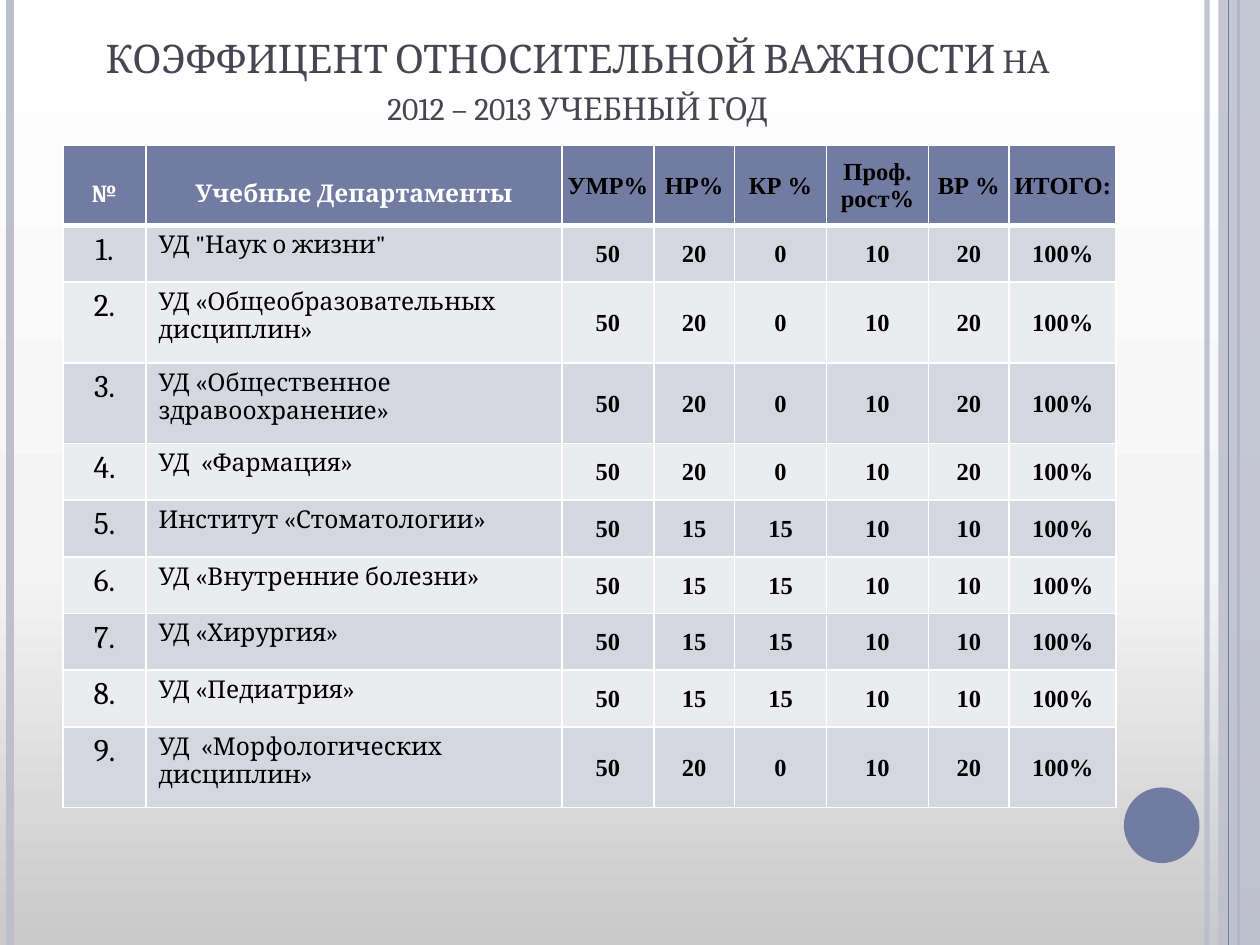
"""Build the slide with the table of relative importance by department."""
import copy

import lxml.etree
import pptx
import pptx.dml.color
import pptx.enum.shapes
import pptx.enum.text
import pptx.oxml
import pptx.oxml.ns
import pptx.util

Inches, Pt = pptx.util.Inches, pptx.util.Pt
ALIGN = pptx.enum.text.PP_ALIGN
ANCHOR = pptx.enum.text.MSO_ANCHOR
SHAPE = pptx.enum.shapes.MSO_SHAPE
qn = pptx.oxml.ns.qn

TITLE = "КОЭФФИЦЕНТ ОТНОСИТЕЛЬНОЙ ВАЖНОСТИ на 2012 – 2013 учебный год"
HEAD = ["№", "Учебные Департаменты", "УМР%", "НР%", "КР %",
        "Проф. рост%", "ВР %", "ИТОГО:"]
THEORY = [50, 20, 0, 10, 20]
CLINIC = [50, 15, 15, 10, 10]
UNITS = [
    ("УД \"Наук о жизни\"", THEORY),
    ("УД «Общеобразовательных дисциплин»", THEORY),
    ("УД «Общественное здравоохранение»", THEORY),
    ("УД  «Фармация»", THEORY),
    ("Институт «Стоматологии»", CLINIC),
    ("УД «Внутренние болезни»", CLINIC),
    ("УД «Хирургия»", CLINIC),
    ("УД «Педиатрия»", CLINIC),
    ("УД  «Морфологических дисциплин»", THEORY),
]
WIDTHS = [0.66, 3.3, 0.73, 0.64, 0.73, 0.81, 0.64, 0.85]
TALL, LOW, WRAP = 0.64, 0.45, 25
BLUE, PALE = "727CA3", "BCBFCE"
BANDS = ["EBECF0", "D5D7E0"]
SKY = [(0, "C9C9C9"), (0.4, "F4F4F4"), (1, "FFFFFF")]
RULES = [(9.58, PALE, 3, 93), (0.08, PALE, 4.5, 100), (9.83, BLUE, 1.5, 100)]
EDGE = (9.75, BLUE, 0.75, 100)


def tint(color, code):
    color.rgb = pptx.dml.color.RGBColor.from_string(code)


def fade(fill, share):
    node = fill._xPr.find(".//" + qn("a:srgbClr"))
    lxml.etree.SubElement(node, qn("a:alpha")).set("val", str(share * 1000))


def paint(slide):
    fill = slide.background.fill
    fill.gradient()
    fill.gradient_angle = 90
    first = fill.gradient_stops[0]._gs
    first.addnext(copy.deepcopy(first))
    for stop, (place, code) in zip(fill.gradient_stops, SKY):
        stop.position = place
        tint(stop.color, code)


def rule(slide, left, code, width, share):
    line = slide.shapes.add_connector(
        pptx.enum.shapes.MSO_CONNECTOR.STRAIGHT,
        Inches(left), 0, Inches(left), Inches(7.5))
    line.line.width = Pt(width)
    tint(line.line.color, code)
    if share < 100:
        fade(line.line.fill, share)
    lxml.etree.SubElement(line._element.spPr, qn("a:effectLst"))


def block(slide, kind, box, code, share=100):
    shape = slide.shapes.add_shape(kind, *map(Inches, box))
    shape.shadow.inherit = False
    shape.line.fill.background()
    shape.fill.solid()
    tint(shape.fill.fore_color, code)
    if share < 100:
        fade(shape.fill, share)


def style(para, size, face, code, bold=False, align=ALIGN.CENTER):
    para.alignment = align
    for run in para.runs:
        run.font.size, run.font.name, run.font.bold = Pt(size), face, bold
        tint(run.font.color, code)


def title(slide):
    box = slide.shapes.add_textbox(*map(Inches, (0.5, 0.3, 8.17, 0.77)))
    frame = box.text_frame
    frame.word_wrap = True
    frame.vertical_anchor = ANCHOR.BOTTOM
    frame.text = TITLE
    style(frame.paragraphs[0], 22.5, "Cambria", "464653")
    frame.paragraphs[0].runs[0].font._element.set("cap", "small")


def border(cell, row):
    widths = {"L": 1, "R": 1, "T": 3 if row == 1 else 1, "B": 1 if row else 3}
    for spot, (side, width) in enumerate(widths.items()):
        line = pptx.oxml.parse_xml(
            f'<a:ln{side} {pptx.oxml.ns.nsdecls("a")} w="{Pt(width)}">'
            f'<a:solidFill><a:srgbClr val="FFFFFF"/></a:solidFill></a:ln{side}>')
        cell._tc.get_or_add_tcPr().insert(spot, line)


def dress(cell, text, row, col):
    cell.text_frame.text = text
    para = cell.text_frame.paragraphs[0]
    if col > 1:
        cell.vertical_anchor = ANCHOR.MIDDLE
        cell.margin_left = cell.margin_right = cell.margin_top = Inches(0.01)
        cell.margin_bottom = 0
        style(para, 14, "Times New Roman", "000000", True)
    elif row == 0:
        cell.margin_top = Inches(0.28)
        style(para, 14, "Cambria", "FFFFFF", True)
    elif col == 0:
        style(para, 18, "Cambria", "000000")
    else:
        style(para, 14, "Cambria", "000000", align=ALIGN.LEFT)
    cell.fill.solid()
    tint(cell.fill.fore_color, BANDS[row % 2] if row else BLUE)
    border(cell, row)


def grid(slide):
    rows = [HEAD] + [
        [f"{num}.", name, *map(str, parts), f"{sum(parts)}%"]
        for num, (name, parts) in enumerate(UNITS, 1)]
    highs = [TALL] + [TALL if len(name) > WRAP else LOW for name, _ in UNITS]
    table = slide.shapes.add_table(
        len(rows), len(HEAD), Inches(0.5), Inches(1.15),
        Inches(sum(WIDTHS)), Inches(sum(highs))).table
    for col, width in zip(table.columns, WIDTHS):
        col.width = Inches(width)
    for row, texts in enumerate(rows):
        table.rows[row].height = Inches(highs[row])
        for col, text in enumerate(texts):
            dress(table.cell(row, col), text, row, col)


def main():
    deck = pptx.Presentation()
    deck.slide_width, deck.slide_height = Inches(10), Inches(7.5)
    slide = deck.slides.add_slide(deck.slide_layouts[6])
    paint(slide)
    for item in RULES:
        rule(slide, *item)
    block(slide, SHAPE.RECTANGLE, (9.67, 0, 0.33, 7.5), PALE, 87)
    rule(slide, *EDGE)
    block(slide, SHAPE.OVAL, (8.92, 6.25, 0.6, 0.6), BLUE)
    title(slide)
    grid(slide)
    deck.save("out.pptx")


if __name__ == "__main__":
    main()
